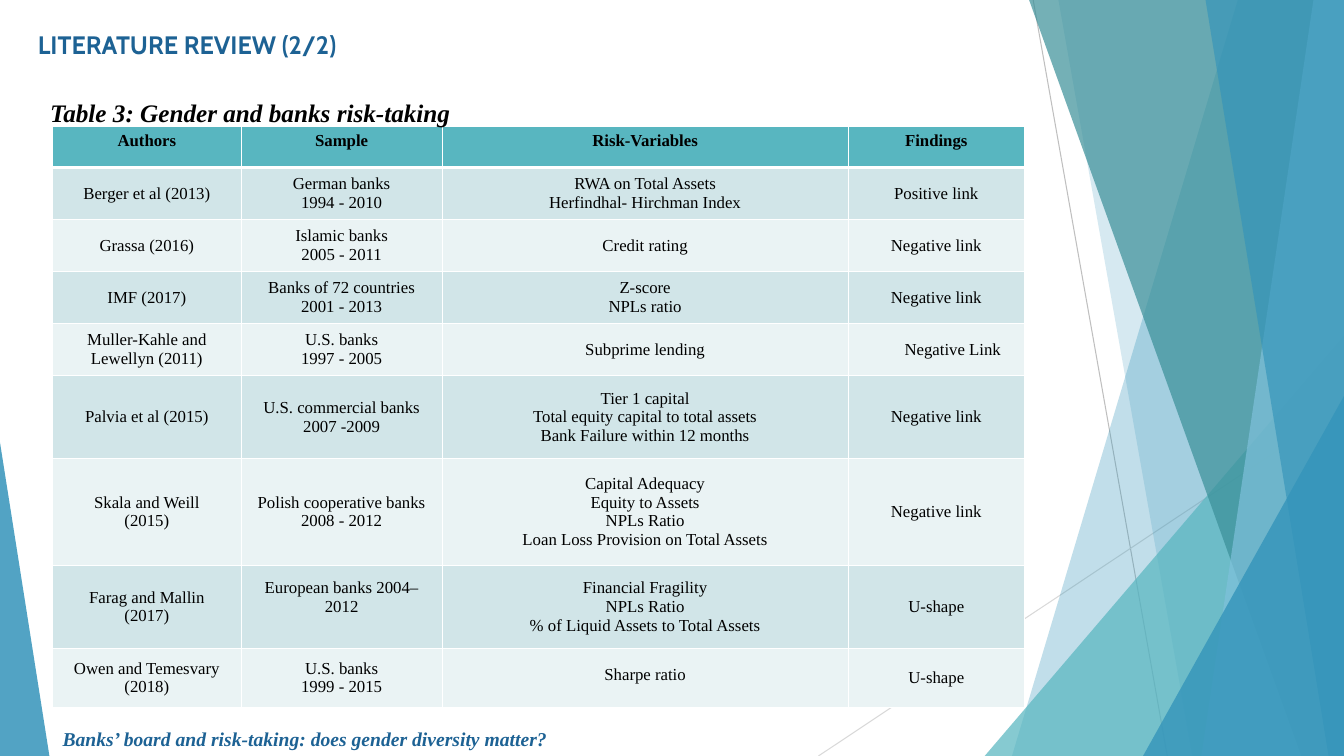
from pptx import Presentation
from pptx.dml.color import RGBColor
from pptx.enum.shapes import MSO_CONNECTOR as Connector, MSO_SHAPE as Preset
from pptx.enum.text import MSO_ANCHOR as Anchor, MSO_AUTO_SIZE as AutoSize, PP_ALIGN as Align
from pptx.oxml.ns import qn
from pptx.util import Pt
from lxml.etree import SubElement

# Content
TITLE = "LITERATURE REVIEW (2/2)"
CAPTION = "Table 3: Gender and banks risk-taking"
QUESTION = "Banks’ board and risk-taking: does gender diversity matter?"
STUDIES = [
    ("Authors", "Sample", "Risk-Variables", "Findings"),
    ("Berger et al (2013)", "German banks\n1994 - 2010",
     "RWA on Total Assets\nHerfindhal- Hirchman Index", "Positive link"),
    ("Grassa (2016)", "Islamic banks\n2005 - 2011", "Credit rating", "Negative link"),
    ("IMF (2017)", "Banks of 72 countries\n2001 - 2013", "Z-score\nNPLs ratio", "Negative link"),
    ("Muller-Kahle and Lewellyn (2011)", "U.S. banks\n1997 - 2005",
     "Subprime lending", "Negative Link"),
    ("Palvia et al (2015)", "U.S. commercial banks\n2007 -2009",
     "Tier 1 capital\nTotal equity capital to total assets\nBank Failure within 12 months",
     "Negative link"),
    ("Skala and Weill\n(2015)", "Polish cooperative banks\n2008 - 2012",
     "Capital Adequacy\nEquity to Assets\nNPLs Ratio\nLoan Loss Provision on Total Assets",
     "Negative link"),
    ("Farag and Mallin\n(2017)", "European banks 2004–2012",
     "Financial Fragility\nNPLs Ratio\n% of Liquid Assets to Total Assets", "U-shape"),
    ("Owen and Temesvary (2018)", "U.S. banks\n1999 - 2015", "Sharpe ratio", "U-shape"),
]
COLUMN_WIDTHS = (134.7, 143.6, 290, 126)
ROW_HEIGHTS = (29.6, 37.2, 37.2, 37.2, 37.2, 59.2, 76.3, 59.2, 42.4)

THEME = {
    "head": "Cabin", "body": "Times New Roman",
    "heading": 18, "question": 14, "cell": 12,
    "navy": "1D6294", "black": "000000", "white": "FFFFFF",
    "blue": "3494BA", "teal": "58B6C0", "deep": "3A8F98", "sky": "7FC1DB",
    "bands": ("EAF3F4", "D1E5E8"), "gray": "BFBFBF", "pale": "D9D9D9",
}
WIDTH, HEIGHT = 960, 540

# Backdrop: lines as x1, y1, x2, y2, colour
RAYS = [(738, 0, 833.8, 540, "gray"), (960, 290.2, 584.6, 540, "pale")]
# Panels reach the right edge: top-left x, bottom-left x, colour, opacity %
# Wedges: left, top, width, apex position, colour, opacity %; all stand on the bottom edge
BACKDROP = [
    ("panel", 884.2, 722.9, "blue", 30),
    ("panel", 756, 851.8, "blue", 20),
    ("wedge", 703.4, 239.8, 256.6, 1, "teal", 72),
    ("panel", 735.1, 929.5, "deep", 70),
    ("panel", 938.2, 858.2, "sky", 70),
    ("panel", 861.1, 949, "blue", 65),
    ("wedge", 816.5, 283, 143.5, 1, "blue", 80),
    ("wedge", 0, 316.1, 35.3, 0, "blue", 85),
]


def color(name):
    return RGBColor.from_string(THEME.get(name, name))


def paint(shape, name, opacity):
    shape.shadow.inherit = False
    shape.fill.solid()
    shape.fill.fore_color.rgb = color(name)
    shape.line.fill.background()
    tint = shape._element.spPr.find(qn("a:solidFill"))[0]
    SubElement(tint, qn("a:alpha"), val=str(opacity * 1000))


def add_ray(page, x1, y1, x2, y2, name):
    ray = page.shapes.add_connector(Connector.STRAIGHT, Pt(x1), Pt(y1), Pt(x2), Pt(y2))
    ray.line.color.rgb = color(name)
    ray.line.width = Pt(0.75)
    SubElement(ray._element.spPr, qn("a:effectLst"))


def add_panel(page, top_x, bottom_x, name, opacity):
    outline = page.shapes.build_freeform(Pt(top_x), 0)
    corners = [(WIDTH, 0), (WIDTH, HEIGHT), (bottom_x, HEIGHT)]
    outline.add_line_segments([(Pt(x), Pt(y)) for x, y in corners], close=True)
    paint(outline.convert_to_shape(), name, opacity)


def add_wedge(page, left, top, width, apex, name, opacity):
    wedge = page.shapes.add_shape(Preset.ISOSCELES_TRIANGLE, Pt(left), Pt(top),
                                  Pt(width), Pt(HEIGHT - top))
    wedge.adjustments[0] = apex
    paint(wedge, name, opacity)


def style(para, font, size, name, bold, italic=False):
    for span in para.runs:
        span.font.name = THEME[font]
        span.font.size = Pt(THEME[size])
        span.font.color.rgb = color(name)
        span.font.bold, span.font.italic = bold, italic


def add_text(page, text, left, top, width, height, font, size, name, italic, wrap=True):
    box = page.shapes.add_textbox(Pt(left), Pt(top), Pt(width), Pt(height))
    frame = box.text_frame
    frame.text = text
    frame.word_wrap = wrap
    frame.auto_size = AutoSize.SHAPE_TO_FIT_TEXT
    style(frame.paragraphs[0], font, size, name, True, italic)


def add_border(cell, side, width):
    edge = SubElement(cell._tc.get_or_add_tcPr(), qn(f"a:ln{side}"), w=str(Pt(width)))
    SubElement(SubElement(edge, qn("a:solidFill")), qn("a:srgbClr"), val=THEME["white"])


def fill_cell(cell, text, row):
    header = row == 0
    thick = {(0, "B"), (1, "T")}
    for side in "LRTB":
        add_border(cell, side, 3 if (row, side) in thick else 1)
    cell.fill.solid()
    cell.fill.fore_color.rgb = color("teal" if header else THEME["bands"][row % 2])
    cell.vertical_anchor = Anchor.TOP if header else Anchor.MIDDLE
    cell.text_frame.text = text
    for para in cell.text_frame.paragraphs:
        para.alignment = Align.CENTER
        style(para, "body", "cell", "black", header)


def add_studies(page, left, top):
    rows, columns = len(STUDIES), len(COLUMN_WIDTHS)
    table = page.shapes.add_table(rows, columns, Pt(left), Pt(top), Pt(sum(COLUMN_WIDTHS)),
                                  Pt(sum(ROW_HEIGHTS))).table
    for column, width in zip(table.columns, COLUMN_WIDTHS):
        column.width = Pt(width)
    for row, (study, height) in enumerate(zip(STUDIES, ROW_HEIGHTS)):
        table.rows[row].height = Pt(height)
        for column, text in enumerate(study):
            fill_cell(table.cell(row, column), text, row)

    # Cells placed off centre
    indented, raised, bottom = table.cell(4, 3), table.cell(7, 1), table.cell(8, 2)
    indented.text_frame.paragraphs[0].alignment = Align.LEFT
    indented.margin_left, indented.margin_right = Pt(40.3), Pt(5)
    raised.margin_bottom = bottom.margin_bottom = Pt(17)
    bottom.vertical_anchor = Anchor.BOTTOM


def main():
    deck = Presentation()
    deck.slide_width, deck.slide_height = Pt(WIDTH), Pt(HEIGHT)
    page = deck.slides.add_slide(deck.slide_layouts[6])

    # Backdrop
    for ray in RAYS:
        add_ray(page, *ray)
    draw = {"panel": add_panel, "wedge": add_wedge}
    for kind, *details in BACKDROP:
        draw[kind](page, *details)

    # Title, table, closing question and caption
    add_text(page, TITLE, 20, 17.3, 556, 29, "head", "heading", "navy", False)
    add_studies(page, 37.6, 90)
    add_text(page, QUESTION, 37.6, 515.7, 723.6, 24.2, "body", "question", "navy", True)
    add_text(page, CAPTION, 28.8, 65.8, 309, 29, "body", "heading", "black", True, wrap=False)

    deck.save("out.pptx")


if __name__ == "__main__":
    main()
